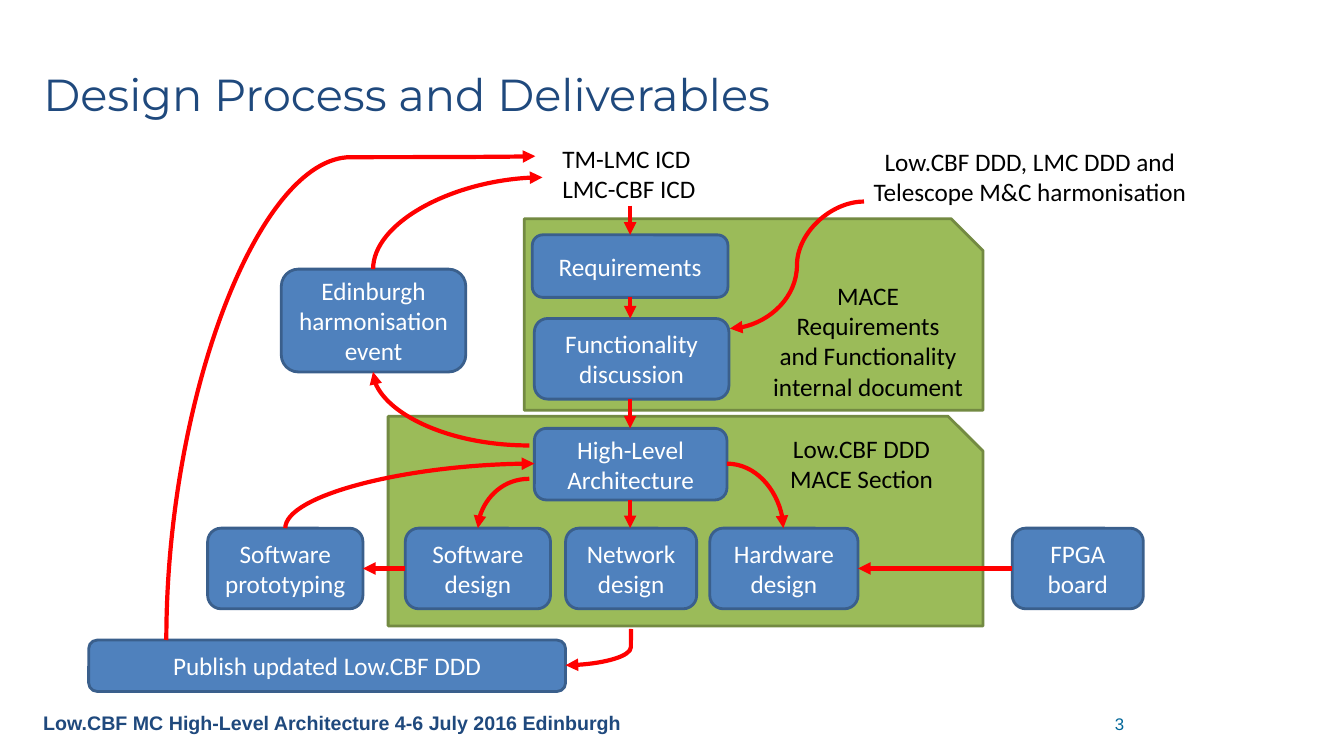
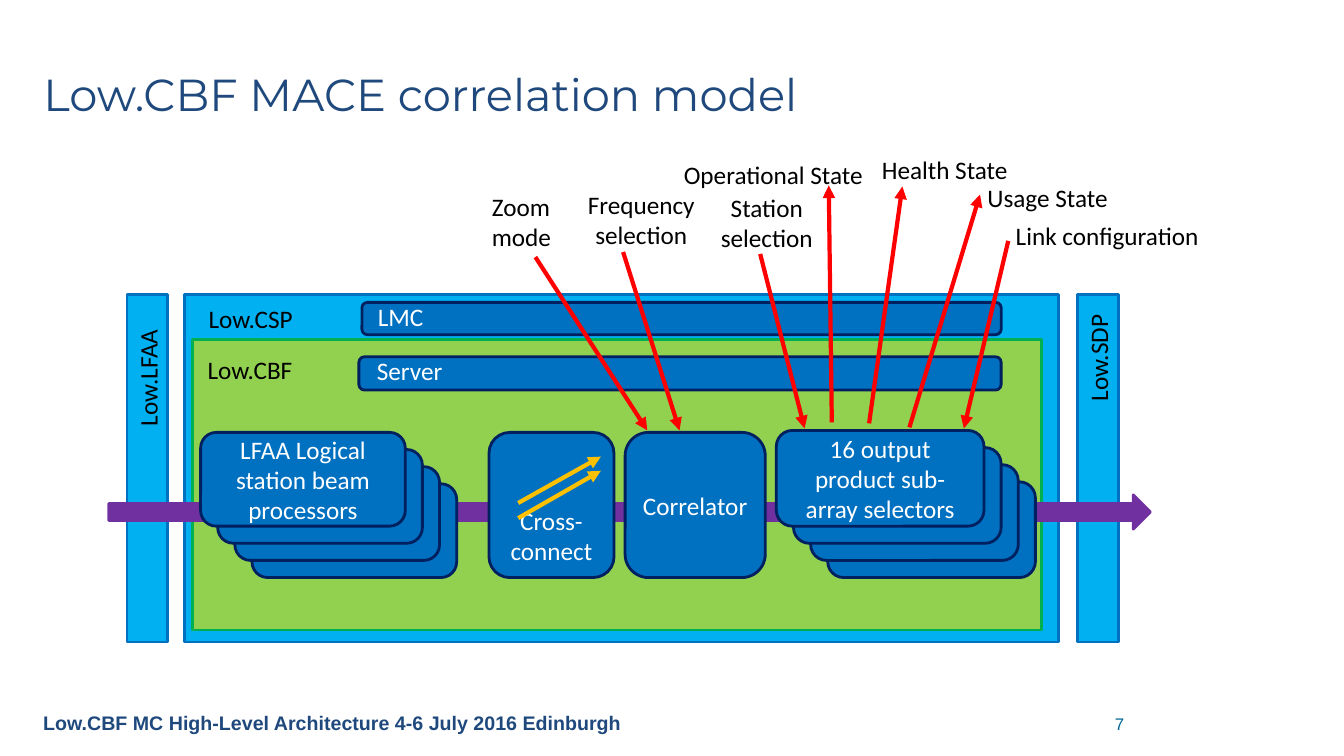
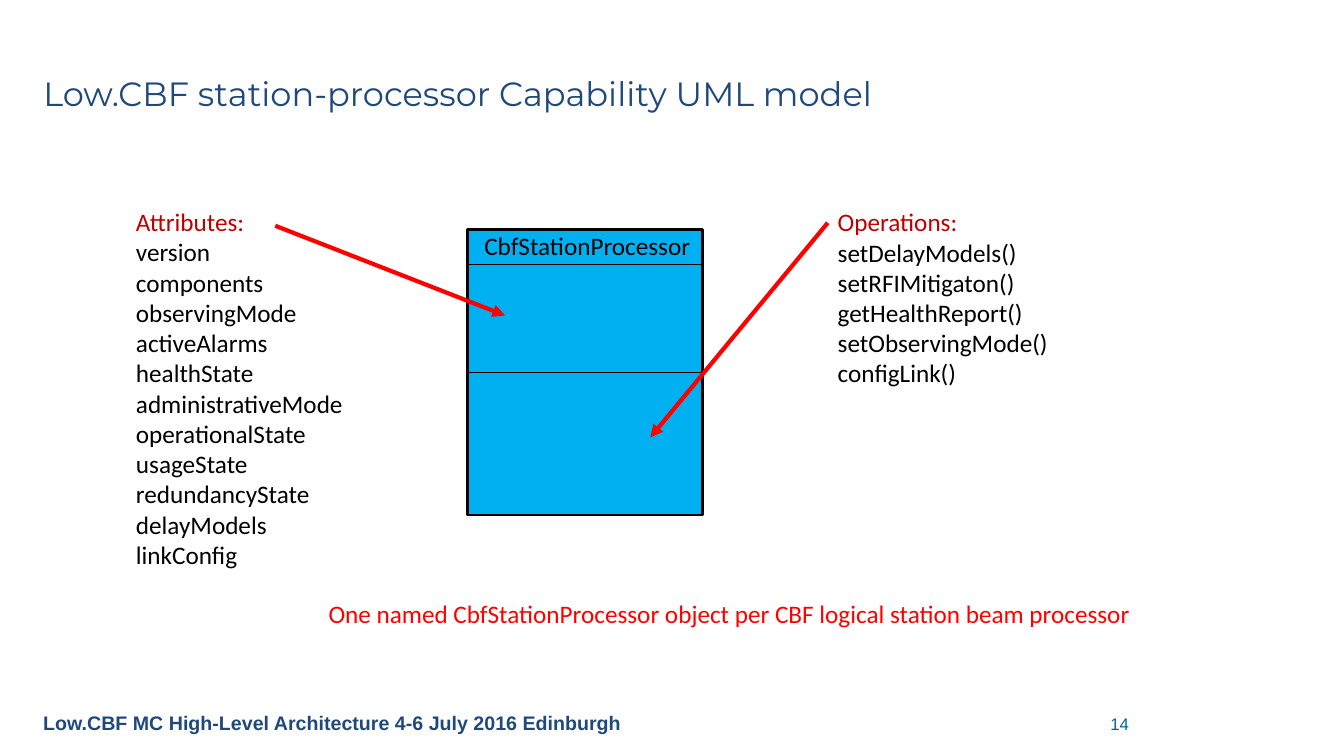
from pptx import Presentation
from pptx.dml.color import RGBColor
from pptx.enum.shapes import MSO_CONNECTOR, MSO_SHAPE
from pptx.enum.text import MSO_ANCHOR, PP_ALIGN
from pptx.oxml.ns import qn
from pptx.util import Inches, Pt
from lxml import etree

RECT = MSO_SHAPE.RECTANGLE
ROUND = MSO_SHAPE.ROUNDED_RECTANGLE
SNIP = MSO_SHAPE.SNIP_1_RECTANGLE
ARROW = MSO_SHAPE.RIGHT_ARROW
LINE, CURVE = MSO_CONNECTOR.STRAIGHT, MSO_CONNECTOR.CURVE
LEFT, MID = PP_ALIGN.LEFT, PP_ALIGN.CENTER
TOP, CENTER = MSO_ANCHOR.TOP, MSO_ANCHOR.MIDDLE

HUES = {
    "navy": "1F497D", "teal": "006699", "black": "000000", "white": "FFFFFF",
    "red": "FF0000", "wine": "C00000", "gold": "FFC000",
    "olive": "9BBB59", "moss": "738A42", "steel": "4F81BD", "slate": "3A5F8C",
    "sky": "00B0F0", "blue": "0070C0", "ink": "002060",
    "lime": "92D050", "green": "00B050", "plum": "7030A0",
}
FOOTER = "Low.CBF MC High-Level Architecture 4-6 July 2016 Edinburgh"

PANELS = [(3.85, 4.13, 5.9, 2.08), (5.2, 2.17, 4.55, 1.9)]
STEPS = [
    ("Requirements", 5.28, 2.33, 1.94, 0.62),
    ("Functionality discussion", 5.3, 3.16, 1.93, 0.8),
    ("High-Level Architecture", 5.3, 4.25, 1.91, 0.71),
    ("Edinburgh harmonisation\nevent", 2.79, 2.67, 1.83, 1.02),
    ("Publish updated Low.CBF DDD", 0.88, 6.35, 4.73, 0.51),
]
TASKS = [
    ("Software prototyping", 2.06, 1.54),
    ("Software design", 4.02, 1.44),
    ("Network\ndesign", 5.61, 1.3),
    ("Hardware design", 7.04, 1.47),
    ("FPGA board", 10.04, 1.3),
]
NOTES = [
    ("TM-LMC ICD\nLMC-CBF ICD", 5.48, 1.37, 1.64, 0.71, LEFT),
    ("Low.CBF DDD, LMC DDD and\nTelescope M&C harmonisation", 7.65, 1.4, 5.13, 0.71, MID),
    ("MACE\nRequirements\nand Functionality\ninternal document", 7.53, 2.73, 2.16, 1.31, MID),
    ("Low.CBF DDD\nMACE Section", 7.73, 4.25, 1.63, 0.71, MID),
]
FLOWS = [
    (6.25, 2.04, 6.25, 2.33), (6.25, 2.95, 6.25, 3.16),
    (6.25, 3.96, 6.25, 4.25), (6.25, 4.96, 6.25, 5.24),
    (4.02, 5.64, 3.6, 5.64), (10.04, 5.64, 8.51, 5.64),
]
BENDS = [
    (8.57, 2, 7.24, 3.26, "across", 50000),
    (5.25, 4.75, 4.74, 5.24, "across", None),
    (7.21, 4.6, 7.77, 5.24, "across", None),
    (5.25, 4.42, 3.7, 3.69, "across", None),
    (2.83, 5.24, 5.3, 4.6, "down", None),
    (3.7, 2.67, 5.38, 1.76, "down", None),
    (6.26, 6.24, 5.61, 6.6, "across", 400),
    (1.65, 6.35, 5.31, 1.55, "down", 99800),
]

FRAMES = [
    (RECT, 10.69, 2.92, 0.4, 3.45, "sky", "blue"),
    (RECT, 1.26, 2.92, 0.4, 3.45, "sky", "blue"),
    (RECT, 1.83, 2.92, 8.67, 3.45, "sky", "blue"),
    (RECT, 1.91, 3.37, 8.42, 2.88, "lime", "green"),
    (ARROW, 1.08, 4.91, 10.33, 0.34, "plum", "plum"),
    (ROUND, 3.59, 3, 6.34, 0.32, "blue", "ink"),
    (ROUND, 3.56, 3.54, 6.37, 0.33, "blue", "ink"),
]
STACKS = [
    ("LFAA Logical station beam processors", 1.99, 4.29, 2.03, 0.93),
    ("16 output product sub-array selectors", 7.7, 4.27, 2.06, 0.95),
]
DEPTH, SHIFT = 4, 0.17
UNITS = [("Correlator", 6.2, 1.39, 0.05), ("Cross-connect", 4.85, 1.24, 0.65)]
LINKS = [(5.14, 4.99, 5.96, 4.53), (5.14, 5.14, 5.96, 4.67)]
TAGS = [
    ("Low.CSP", 1.97, 2.96, 1.14, 0.4, LEFT, "black"),
    ("Low.CBF", 1.96, 3.47, 1.15, 0.4, LEFT, "black"),
    ("LMC", 3.65, 2.94, 0.76, 0.4, LEFT, "white"),
    ("Server", 3.64, 3.48, 0.96, 0.4, LEFT, "white"),
    ("Zoom\nmode", 4.78, 1.85, 0.94, 0.71, LEFT, "black"),
    ("Frequency\nselection", 5.72, 1.83, 1.28, 0.71, MID, "black"),
    ("Station\nselection", 7.04, 1.86, 1.13, 0.71, MID, "black"),
    ("Link configuration", 9.89, 2.14, 2.18, 0.4, MID, "black"),
    ("Operational State", 6.49, 1.53, 2.36, 0.4, MID, "black"),
    ("Health State", 8.19, 1.48, 2.36, 0.4, MID, "black"),
    ("Usage State", 9.21, 1.76, 2.36, 0.4, MID, "black"),
]
SIDES = [("Low.LFAA", 0.82, 3.48, 1.29), ("Low.SDP", 10.23, 3.22, 1.32)]
SIGNALS = [
    (5.31, 2.55, 6.42, 4.27), (6.18, 2.5, 6.74, 4.27),
    (7.54, 2.52, 7.98, 4.25), (10, 2.39, 9.56, 4.25),
    (8.25, 4.19, 8.22, 1.84), (8.62, 4.2, 8.95, 1.85),
    (9.02, 4.24, 9.72, 1.93),
]

LISTS = [
    ("Attributes:", ["version", "components", "observingMode", "activeAlarms",
                     "healthState", "administrativeMode", "operationalState",
                     "usageState", "redundancyState", "delayModels",
                     "linkConfig"], 1.25, 2.52, 4.04),
    ("Operations:", ["setDelayModels()", "setRFIMitigaton()",
                     "getHealthReport()", "setObservingMode()",
                     "configLink()"], 8.21, 3.08, 1.92),
]
CLASS = (4.64, 2.28, 2.33, 2.83)
RULES = [2.62, 3.7]
POINTERS = [(2.73, 2.24, 5.01, 3.13), (8.21, 2.21, 6.45, 4.34)]
REMARK = "One named CbfStationProcessor object per CBF logical station beam processor"


def rgb(hue):
    return RGBColor.from_string(HUES[hue])


def write(shape, text, align, hue, size=18, face="Calibri", bold=False):
    frame = shape.text_frame
    frame.text = text
    for para in frame.paragraphs:
        para.alignment = align
        for run in para.runs:
            font = run.font
            font.size, font.name, font.bold = Pt(size), face, bold
            font.color.rgb = rgb(hue)
    return frame


def label(slide, text, x, y, w, h, align=LEFT, hue="black", **style):
    box = slide.shapes.add_textbox(*map(Inches, (x, y, w, h)))
    frame = write(box, text, align, hue, **style)
    frame.word_wrap = align == LEFT
    frame.vertical_anchor = TOP
    return box


def block(slide, kind, x, y, w, h, fill, edge, text="", top=0.05):
    shape = slide.shapes.add_shape(kind, *map(Inches, (x, y, w, h)))
    shape.shadow.inherit = False
    shape.fill.solid()
    shape.fill.fore_color.rgb = rgb(fill)
    shape.line.color.rgb = rgb(edge)
    shape.line.width = Pt(2)
    if text:
        frame = write(shape, text, MID, "white")
        frame.word_wrap = True
        frame.vertical_anchor = CENTER
        frame.margin_top = Inches(top)
    return shape


def stroke(slide, ends, hue="red", width=3, head=True, kind=LINE):
    line = slide.shapes.add_connector(kind, *map(Inches, ends))
    line.line.color.rgb = rgb(hue)
    line.line.width = Pt(width)
    props = line._element.spPr
    if head:
        etree.SubElement(props.find(qn("a:ln")), qn("a:tailEnd"), type="triangle")
    etree.SubElement(props, qn("a:effectLst"))
    return line


def bend(slide, x1, y1, x2, y2, way, adj):
    ends = (x1, y1, x2, y2)
    if way == "down":
        cx, cy = (x1 + x2) / 2, (y1 + y2) / 2
        dx, dy = (y2 - y1) / 2, (x1 - x2) / 2
        ends = (cx - dx, cy - dy, cx + dx, cy + dy)
    props = stroke(slide, ends, kind=CURVE)._element.spPr
    if way == "down":
        props.find(qn("a:xfrm")).set("rot", "5400000")
    geom = props.find(qn("a:prstGeom"))
    if adj is None:
        geom.set("prst", "curvedConnector2")
    else:
        geom.set("prst", "curvedConnector3")
        guides = geom.find(qn("a:avLst"))
        if guides is None:
            guides = etree.SubElement(geom, qn("a:avLst"))
        etree.SubElement(guides, qn("a:gd"), name="adj1", fmla=f"val {adj}")


def page(deck, title, number, size=32):
    slide = deck.slides.add_slide(deck.slide_layouts[5])
    head = slide.shapes.title
    head.left, head.top, head.width, head.height = map(Inches, (0.33, 0.3, 12.67, 1.25))
    frame = write(head, title, LEFT, "navy", size, "Montserrat")
    frame.vertical_anchor = CENTER
    label(slide, FOOTER, 0.33, 7, 6.33, 0.34, hue="navy", size=14, face="Arial", bold=True)
    label(slide, number, 10.44, 7.03, 1.33, 0.3, MID, "teal", size=12, face="Arial")
    return slide


def process(deck):
    slide = page(deck, "Design Process and Deliverables", "3")
    for area in PANELS:
        block(slide, SNIP, *area, "olive", "moss")
    tasks = [(text, x, 5.24, w, 0.8) for text, x, w in TASKS]
    for text, *area in STEPS + tasks:
        block(slide, ROUND, *area, "steel", "slate", text)
    for note in NOTES:
        label(slide, *note)
    for ends in FLOWS:
        stroke(slide, ends)
    for curve in BENDS:
        bend(slide, *curve)


def model(deck):
    slide = page(deck, "Low.CBF MACE correlation model", "7")
    for frame in FRAMES:
        block(slide, *frame)
    for text, x, y, w, h in STACKS:
        for step in reversed(range(DEPTH)):
            gap = step * SHIFT
            block(slide, ROUND, x + gap, y + gap, w, h, "blue", "ink",
                  "" if step else text)
    for text, x, w, top in UNITS:
        block(slide, ROUND, x, 4.29, w, 1.44, "blue", "ink", text, top)
    for ends in LINKS:
        stroke(slide, ends, "gold")
    for ends in SIGNALS:
        stroke(slide, ends)
    for tag in TAGS:
        label(slide, *tag)
    for text, x, y, w in SIDES:
        label(slide, text, x, y, w, 0.4).rotation = 270


def uml(deck):
    slide = page(deck, "Low.CBF station-processor Capability UML model", "14", 24)
    for head, items, x, w, h in LISTS:
        box = label(slide, "\n".join([head] + items), x, 2, w, h)
        box.text_frame.paragraphs[0].runs[0].font.color.rgb = rgb("wine")
    block(slide, RECT, *CLASS, "sky", "black")
    x, _, w, _ = CLASS
    for y in RULES:
        stroke(slide, (x, y, x + w, y), "black", 0.75, False)
    label(slide, "CbfStationProcessor", 4.69, 2.24, 2.27, 0.4, MID)
    for ends in POINTERS:
        stroke(slide, ends)
    label(slide, REMARK, 3.16, 5.89, 8.35, 0.4, hue="red")


def main():
    deck = Presentation()
    deck.slide_width, deck.slide_height = Inches(13.33), Inches(7.5)
    for build in (process, model, uml):
        build(deck)
    deck.save("out.pptx")


if __name__ == "__main__":
    main()
